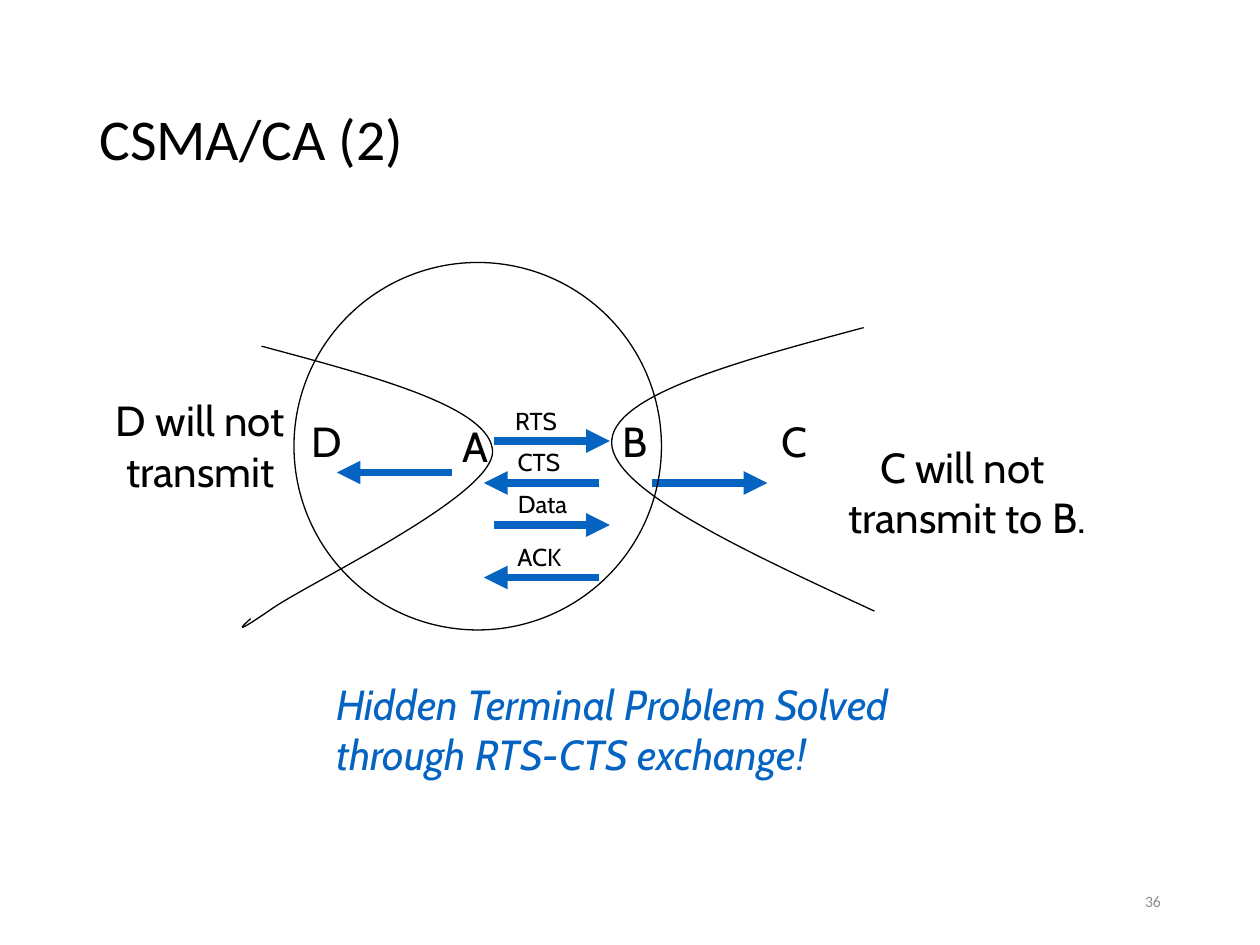
from pptx import Presentation
from pptx.dml.color import RGBColor
from pptx.enum.shapes import MSO_CONNECTOR as Connector, MSO_SHAPE as Shape
from pptx.enum.text import MSO_ANCHOR as Anchor, MSO_AUTO_SIZE as AutoSize, PP_ALIGN as Align
from pptx.oxml.ns import qn
from pptx.util import Pt
from lxml.etree import SubElement

BLACK, BLUE, GRAY = "000000", "0563C1", "8C8C8C"
LEFT, CENTER, RIGHT = Align.LEFT, Align.CENTER, Align.RIGHT

# Content: lengths in points
TITLE = ("CSMA/CA (2)", (49.7, 28.8, 620.6, 104.4))
PAGE_NUMBER = ("36", (508.5, 500.4, 162, 28.8))

# Stations: name, left, top, width, alignment
STATIONS = [
    ("A", 257, 237, 28.8, LEFT),
    ("B", 348.5, 234, 28.8, LEFT),
    ("C", 439.7, 234, 28.8, LEFT),
    ("D", 168.5, 234, 36, CENTER),
]

# Messages: name, left, top, width, alignment
MESSAGES = [
    ("RTS", 287.3, 228.2, 38.9, LEFT),
    ("CTS", 288.5, 252, 38.9, CENTER),
    ("Data", 288.5, 276, 43.2, CENTER),
    ("ACK", 288.5, 306, 39.6, LEFT),
]

# Notes: lines, left, top, width, alignment, colour, italic, wrap
NOTES = [
    (["D will not transmit"], 42.5, 222, 144, CENTER, BLACK, False, True),
    (["C will not ", "transmit to B."], 473, 248.6, 159.1, CENTER, BLACK, False, False),
    (["Hidden Terminal Problem Solved", "through RTS-CTS exchange!"],
     185.2, 384, 360, LEFT, BLUE, True, False),
]

# Arrows: start x, y, direction
ARROW_LENGTH = 66
ARROWS = [
    (282.5, 252, 1),   # RTS
    (342.5, 276, -1),  # CTS
    (372.5, 276, 1),   # CTS heard by C
    (282.5, 300, 1),   # Data
    (342.5, 330, -1),  # ACK
    (258.5, 270, -1),  # RTS heard by D
]

RANGE_OF_A = (168, 150, 210, 210)

# Range edges: start point, then two controls and an end for each curve
EDGES = [
    [(149.4, 197.8),
     (214.6, 215.3), (280.1, 232.6), (281.5, 257.8),
     (282.2, 283), (178.6, 331.9), (155.5, 347.8),
     (132.5, 363.6), (137.5, 358.6), (143.3, 353.5)],
    [(493.6, 187.2),
     (421.2, 206.6), (348.5, 226.1), (349.6, 253.4),
     (350.6, 280.1), (424.8, 314.6), (499.7, 349.2)],
]


def color(value):
    return RGBColor.from_string(value)


def add_text(page, lines, frame, size, font="Cabin", fill=BLACK, align=LEFT,
             italic=False, wrap=False, middle=False, spacing=None):
    box = page.shapes.add_textbox(*map(Pt, frame))
    text = box.text_frame
    text.word_wrap = wrap
    text.auto_size = AutoSize.NONE if middle else AutoSize.SHAPE_TO_FIT_TEXT
    text.vertical_anchor = Anchor.MIDDLE if middle else Anchor.TOP
    for index, line in enumerate(lines):
        para = text.add_paragraph() if index else text.paragraphs[0]
        para.alignment = align
        para.line_spacing = spacing
        span = para.add_run()
        span.text = line
        span.font.name, span.font.size, span.font.italic = font, Pt(size), italic
        span.font.color.rgb = color(fill)


def outline(shape):
    shape.shadow.inherit = False
    shape.fill.background()
    shape.line.color.rgb = color(BLACK)
    shape.line.width = Pt(0.75)


def add_arrow(page, start, y, direction):
    end = start + direction * ARROW_LENGTH
    arrow = page.shapes.add_connector(Connector.STRAIGHT, Pt(start), Pt(y), Pt(end), Pt(y))
    arrow.line.color.rgb = color(BLUE)
    arrow.line.width = Pt(4.5)
    SubElement(arrow.line._get_or_add_ln(), qn("a:tailEnd"), type="triangle")
    SubElement(arrow._element.spPr, qn("a:effectLst"))


def add_edge(page, points):
    start, *rest = [(Pt(x), Pt(y)) for x, y in points]
    builder = page.shapes.build_freeform(*start)
    builder.add_line_segments(rest, close=False)
    edge = builder.convert_to_shape()
    outline(edge)
    # Turn every three straight segments into one Bezier curve
    outline_path = next(edge._element.iter(qn("a:path")))
    segments = outline_path.findall(qn("a:lnTo"))
    for first in range(0, len(segments), 3):
        curve = SubElement(outline_path, qn("a:cubicBezTo"))
        for segment in segments[first:first + 3]:
            curve.append(segment[0])
            outline_path.remove(segment)


def main():
    deck = Presentation()
    deck.slide_width, deck.slide_height = Pt(720), Pt(540)
    page = deck.slides.add_slide(deck.slide_layouts[6])

    # Title
    add_text(page, [TITLE[0]], TITLE[1], 33, "Calibri", wrap=True, middle=True, spacing=0.9)

    # Ranges and transmissions
    for points in EDGES:
        add_edge(page, points)
    for arrow in ARROWS:
        add_arrow(page, *arrow)

    # Labels
    for group, size, height in ((MESSAGES, 14, 24), (STATIONS, 24, 36)):
        for name, left, top, width, align in group:
            add_text(page, [name], (left, top, width, height), size,
                     align=align, wrap=name == "D")
    for lines, left, top, width, align, fill, italic, wrap in NOTES:
        add_text(page, lines, (left, top, width, 64.8), 24, fill=fill,
                 align=align, italic=italic, wrap=wrap)

    outline(page.shapes.add_shape(Shape.OVAL, *map(Pt, RANGE_OF_A)))

    # Page number
    add_text(page, [PAGE_NUMBER[0]], PAGE_NUMBER[1], 9, "Calibri", GRAY, RIGHT,
             wrap=True, middle=True)
    deck.save("out.pptx")


if __name__ == "__main__":
    main()
